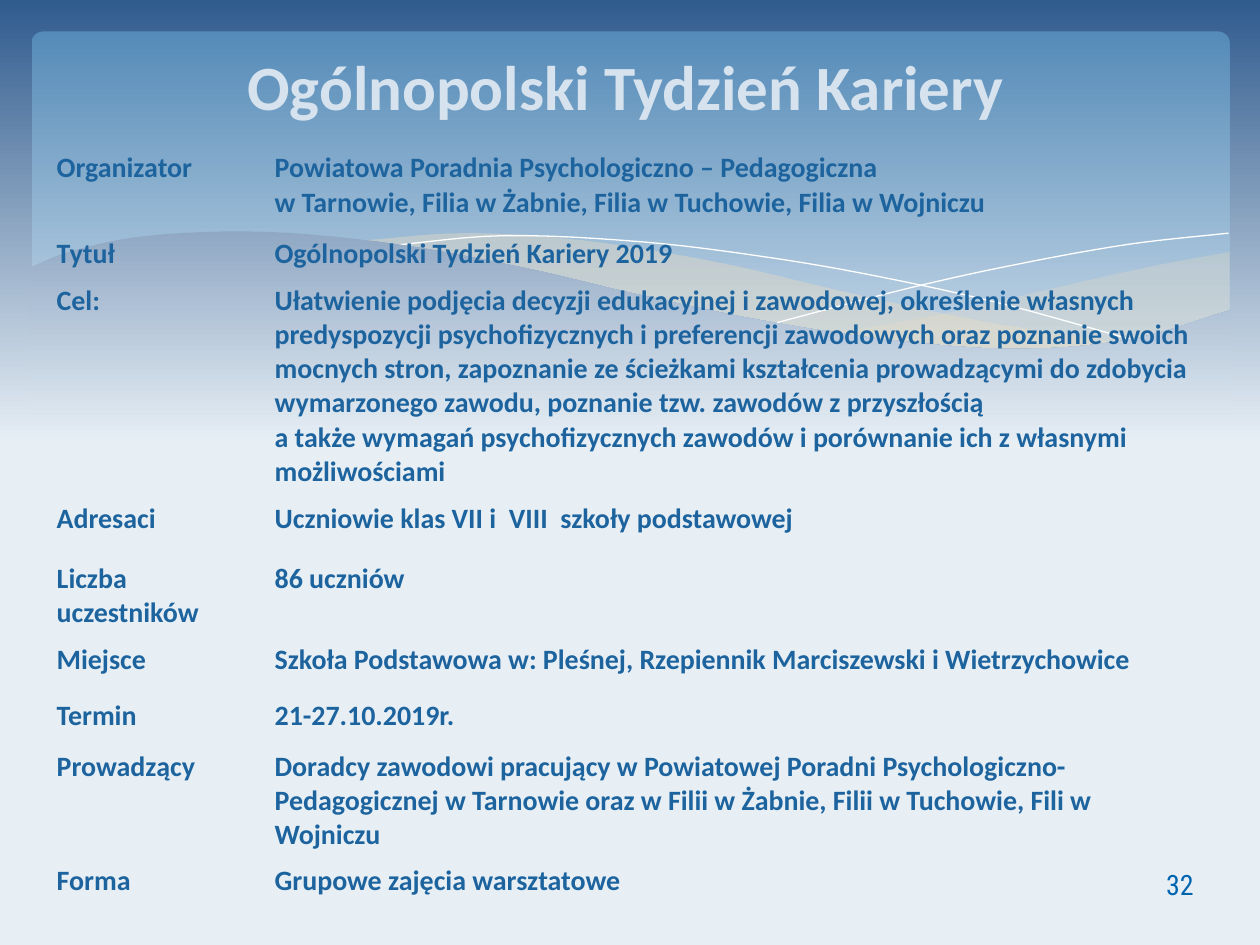
from lxml import etree
from pptx import Presentation
from pptx.dml.color import RGBColor
from pptx.enum.shapes import MSO_SHAPE
from pptx.enum.text import MSO_ANCHOR, PP_ALIGN
from pptx.oxml.ns import qn
from pptx.util import Inches, Pt

CENTER, LEFT, JUST = PP_ALIGN.CENTER, PP_ALIGN.LEFT, PP_ALIGN.JUSTIFY
MIDDLE = MSO_ANCHOR.MIDDLE
ROUND = MSO_SHAPE.ROUNDED_RECTANGLE

NAVY = RGBColor(0x30, 0x5B, 0x8E)
MIST = RGBColor(0xE7, 0xEF, 0xF5)
BLUE = RGBColor(0x55, 0x8B, 0xB8)
PALE = RGBColor(0xBF, 0xD3, 0xE4)
SAND = RGBColor(0xEB, 0xDD, 0xC3)
WHITE = RGBColor(0xFF, 0xFF, 0xFF)
TITLE = RGBColor(0xD6, 0xE3, 0xEE)
INK = RGBColor(0x1D, 0x64, 0x9F)
PAGE = RGBColor(0x00, 0x65, 0xB0)

WIDE, HIGH = 10, 7.5
FADE = 0.47  # share of the slide height where the backdrop turns plain
CREST, BASE = 1.84, 3.29  # top and bottom of the wave
STEPS = 6  # straight pieces between two knots of a curve

# Label, text, alignment of the text, row height
ROWS = [
    ("Organizator", "Powiatowa Poradnia Psychologiczno – Pedagogiczna \n"
     "w Tarnowie, Filia w Żabnie, Filia w Tuchowie, Filia w Wojniczu",
     LEFT, 0.68),
    ("Tytuł", "Ogólnopolski Tydzień Kariery 2019", JUST, 0.37),
    ("Cel:", "Ułatwienie podjęcia decyzji edukacyjnej i zawodowej, określenie "
     "własnych predyspozycji psychofizycznych i preferencji zawodowych oraz "
     "poznanie swoich mocnych stron, zapoznanie ze ścieżkami kształcenia "
     "prowadzącymi do zdobycia wymarzonego zawodu, poznanie tzw. zawodów "
     "z przyszłością \na także wymagań psychofizycznych zawodów i porównanie "
     "ich z własnymi możliwościami", LEFT, 1.73),
    ("Adresaci", "Uczniowie klas VII i  VIII  szkoły podstawowej", LEFT, 0.48),
    ("Liczba uczestników", "86 uczniów", JUST, 0.64),
    ("Miejsce", "Szkoła Podstawowa w: Pleśnej, Rzepiennik Marciszewski "
     "i Wietrzychowice ", JUST, 0.45),
    ("Termin", "21-27.10.2019r.", JUST, 0.4),
    ("Prowadzący", "Doradcy zawodowi pracujący w Powiatowej Poradni "
     "Psychologiczno- Pedagogicznej w Tarnowie oraz w Filii w Żabnie, "
     "Filii w Tuchowie, Fili w Wojniczu", LEFT, 0.91),
    ("Forma", "Grupowe zajęcia warsztatowe", JUST, 0.61),
]


def blend(a, b, c, d, t):
    """Catmull-Rom value at t between b and c, with neighbours a and d."""
    return b + t / 2 * (c - a + t * (2 * a - 5 * b + 4 * c - d
                                     + t * (3 * (b - c) + d - a)))


def bend(*knots):
    """Points of a smooth curve through the knots."""
    (x0, y0), (x1, y1) = knots[:2]
    (x2, y2), (x3, y3) = knots[-2:]
    # Mirror the neighbours of both ends so that the ends have tangents
    line = [(2 * x0 - x1, 2 * y0 - y1), *knots, (2 * x3 - x2, 2 * y3 - y2)]
    points = [knots[0]]
    for four in zip(line, line[1:], line[2:], line[3:]):
        xs, ys = zip(*four)
        for step in range(1, STEPS + 1):
            t = step / STEPS
            points.append((blend(*xs, t), blend(*ys, t)))
    return points


def shade(fill, first, last, end=1.0):
    """Fill from top to bottom, with the last colour reached at end."""
    fill.gradient()
    fill.gradient_angle = 270
    for stop, color, place in zip(fill.gradient_stops, (first, last), (0, end)):
        stop.color.rgb = color
        stop.position = place


def tone(y):
    """Colour of the backdrop at height y."""
    part = y / (HIGH * FADE)
    return RGBColor(*(round(a + (b - a) * part) for a, b in zip(NAVY, MIST)))


def trace(slide, points, close=True):
    spots = [(Inches(x), Inches(y)) for x, y in points]
    pen = slide.shapes.build_freeform(*spots[0])
    pen.add_line_segments(spots[1:], close=close)
    shape = pen.convert_to_shape()
    shape.shadow.inherit = False
    shape.line.fill.background()
    return shape


def ribbon(slide, upper, lower, alpha):
    """Sand-coloured area between two curves, alpha in percent."""
    fill = trace(slide, upper + lower).fill
    fill.solid()
    fill.fore_color.rgb = SAND
    color = fill._xPr.find(qn("a:solidFill"))[0]
    etree.SubElement(color, qn("a:alpha")).set("val", str(alpha * 1000))


def thread(slide, points):
    """Thin white curve."""
    shape = trace(slide, points, close=False)
    shape.fill.background()
    shape.line.color.rgb = WHITE
    shape.line.width = Pt(0)


def waves(slide):
    # Ribbons: upper edge from right to left, lower edge back
    ribbon(slide,
           bend((9.76, 2), (9.21, 2.1), (8.61, 2.23), (7.53, 2.48),
                (6.61, 2.65)),
           bend((6.61, 2.65), (7.19, 2.72), (8.03, 2.78), (8.89, 2.72),
                (9.35, 2.62), (9.76, 2.47)), 29)
    ribbon(slide,
           bend((8.93, 2.73), (7.75, 2.54), (6.68, 2.31), (5.69, 2.08),
                (4.65, 1.91), (3.7, 1.85), (2.86, 1.91)),
           bend((2.86, 1.91), (4.04, 2.11), (5.3, 2.4), (6.5, 2.64),
                (7.73, 2.77), (8.93, 2.73)), 40)

    # Threads: one falls to the right, one rises
    thread(slide, bend((3.09, 1.95), (4.01, 1.87), (5.1, 1.92), (6.08, 2.04),
                       (6.95, 2.19), (7.95, 2.41), (9.07, 2.72)))
    thread(slide, bend((6.13, 2.57), (7.2, 2.29), (8.06, 2.1), (8.95, 1.94),
                       (9.75, 1.85)))

    # Wave in the backdrop's colours, hiding the foot of the panel
    edge = bend((9.77, 2.46), (8.99, 2.69), (8.09, 2.77), (7.08, 2.7),
                (6.03, 2.54), (5.03, 2.33), (4.18, 2.13), (3.16, 1.94),
                (2.11, CREST), (1.19, 1.87), (0.59, 1.99), (0.23, 2.13))
    wave = trace(slide, edge + [(0.23, BASE), (9.77, BASE)])
    shade(wave.fill, tone(CREST), tone(BASE))


def panel(slide):
    shape = slide.shapes.add_shape(
        ROUND, *map(Inches, (0.25, 0.25, 9.51, 2.7)))
    shape.adjustments[0] = 0.034
    shape.shadow.inherit = False
    shape.line.fill.background()
    shade(shape.fill, BLUE, PALE, 0.9)


def write(para, text, size, color, align, face="Calibri", bold=True):
    para.text = text
    para.alignment = align
    font = para.font
    font.name, font.size, font.bold = face, Pt(size), bold
    font.color.rgb = color


def label(slide, box, *style):
    frame = slide.shapes.add_textbox(*map(Inches, box)).text_frame
    frame.word_wrap = True
    frame.vertical_anchor = MIDDLE
    write(frame.paragraphs[0], *style)


def strip(cell):
    """Take fill and borders off a cell."""
    cell.fill.background()
    props = cell._tc.get_or_add_tcPr()
    for place, side in enumerate("LRTB"):
        line = etree.Element(qn("a:ln" + side), w="0")
        etree.SubElement(line, qn("a:noFill"))
        props.insert(place, line)


def grid(slide):
    high = sum(row[-1] for row in ROWS)
    table = slide.shapes.add_table(
        len(ROWS), 2, *map(Inches, (0.35, 1.15, 9.29, high))).table
    table.first_row = table.horz_banding = False
    for col, width in zip(table.columns, (1.73, 7.56)):
        col.width = Inches(width)
    for row, (name, text, align, height) in zip(table.rows, ROWS):
        row.height = Inches(height)
        for cell, words, side in zip(row.cells, (name, text), (LEFT, align)):
            strip(cell)
            write(cell.text_frame.paragraphs[0], words, 16, INK, side)


def main():
    deck = Presentation()
    deck.slide_width, deck.slide_height = Inches(WIDE), Inches(HIGH)
    slide = deck.slides.add_slide(deck.slide_layouts[6])

    # Backdrop
    shade(slide.background.fill, NAVY, MIST, FADE)
    panel(slide)
    waves(slide)

    # Title, table and page number
    label(slide, (0.43, 0.13, 9.07, 1.1), "Ogólnopolski Tydzień Kariery",
          36, TITLE, CENTER)
    grid(slide)
    label(slide, (8.73, 6.82, 1.27, 0.4), "32", 16, PAGE, CENTER,
          "Roboto Condensed", False)
    deck.save("out.pptx")


if __name__ == "__main__":
    main()
